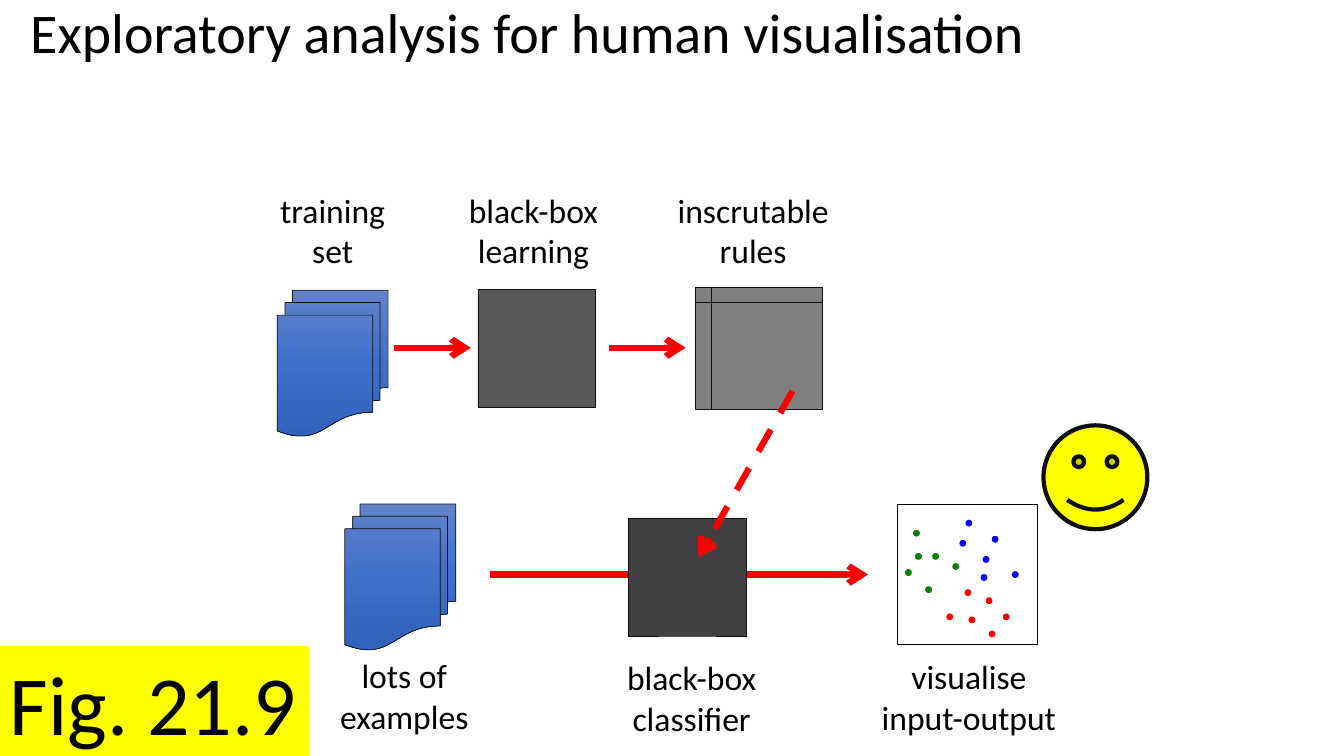
from copy import deepcopy

from lxml.etree import SubElement
from pptx import Presentation
from pptx.dml.color import RGBColor
from pptx.enum.dml import MSO_LINE
from pptx.enum.shapes import MSO_CONNECTOR, MSO_SHAPE
from pptx.enum.text import MSO_ANCHOR, PP_ALIGN
from pptx.oxml.ns import qn
from pptx.util import Inches, Pt

HUES = {
    "ink": "000000", "edge": "0D0D0D", "paper": "FFFFFF",
    "learn": "595959", "rules": "808080", "class": "404040",
    "red": "FF0000", "green": "008000", "blue": "0000FF", "yellow": "FFFF00",
    "light": "6183CB", "middle": "3E70CA", "deep": "3062BB",
}
DOTS = {
    "green": [(0.16, 0.26), (0.35, 0.49), (0.55, 0.59), (0.18, 0.49),
              (0.08, 0.65), (0.28, 0.82)],
    "red": [(0.67, 0.85), (0.88, 0.93), (1.05, 1.09), (0.49, 1.09),
            (0.71, 1.12), (0.91, 1.26)],
    "blue": [(0.68, 0.16), (0.94, 0.32), (0.83, 0.7), (0.62, 0.36),
             (0.85, 0.52), (1.14, 0.67)],
}


def hue(name):
    return RGBColor.from_string(HUES[name])


def write(frame, text, size=24, align=PP_ALIGN.CENTER, wrap=False):
    frame.word_wrap = wrap
    frame.vertical_anchor = MSO_ANCHOR.TOP
    line = frame.paragraphs[0]
    line.text = text
    line.alignment = align
    for run in line.runs:
        run.font.size = Pt(size)
        run.font.name = "Calibri"
        run.font.color.rgb = hue("ink")
    return line


def label(slide, text, left, top, width):
    box = slide.shapes.add_textbox(
        Inches(left), Inches(top), Inches(width), Inches(0.91))
    write(box.text_frame, text)


def draw(slide, kind, box, fill, edge="edge", weight=0.5):
    shape = slide.shapes.add_shape(kind, *map(Inches, box))
    shape.shadow.inherit = False
    if fill:
        shape.fill.solid()
        shape.fill.fore_color.rgb = hue(fill)
    if edge:
        shape.line.color.rgb = hue(edge)
        shape.line.width = Pt(weight)
    else:
        shape.line.fill.background()
    return shape


def arrow(slide, start, end, dash=False):
    line = slide.shapes.add_connector(
        MSO_CONNECTOR.STRAIGHT, *map(Inches, start + end))
    line.line.color.rgb = hue("red")
    line.line.width = Pt(4.5)
    if dash:
        line.line.dash_style = MSO_LINE.DASH
    props = line._element.spPr
    SubElement(props.find(qn("a:ln")), qn("a:tailEnd"), type="arrow")
    SubElement(props, qn("a:effectLst"))


def stack(slide, left, top):
    box = (left, top, 1.1, 1.45)
    shape = draw(slide, MSO_SHAPE.FLOWCHART_MULTIDOCUMENT, box, None)
    shape.fill.gradient()
    shape.fill.gradient_angle = 270
    first = shape._element.spPr.find(qn("a:gradFill")).find(qn("a:gsLst"))[0]
    first.addnext(deepcopy(first))
    names = ("light", "middle", "deep")
    for index, stop in enumerate(shape.fill.gradient_stops):
        stop.color.rgb = hue(names[index])
        stop.position = index / 2


def head(slide, left, top, width, height):
    title = slide.shapes.title
    title.left, title.top = Inches(left), Inches(top)
    title.width, title.height = Inches(width), Inches(height)
    line = write(title.text_frame,
                 "Exploratory analysis for human visualisation",
                 size=40, align=PP_ALIGN.LEFT, wrap=True)
    line.line_spacing = 0.9


def train(slide, left, top):
    label(slide, "training\nset", left, top, 1.26)
    label(slide, "black-box\nlearning", left + 1.86, top, 1.52)
    label(slide, "inscrutable\nrules", left + 3.94, top, 1.72)
    stack(slide, left + 0.08, top + 1.05)
    draw(slide, MSO_SHAPE.RECTANGLE,
         (left + 2.07, top + 1.04, 1.17, 1.17), "learn")
    draw(slide, MSO_SHAPE.FLOWCHART_INTERNAL_STORAGE,
         (left + 4.23, top + 1.02, 1.26, 1.21), "rules")
    for start in (left + 1.24, left + 3.37):
        arrow(slide, (start, top + 1.62), (start + 0.76, top + 1.62))


def apply(slide, left, top):
    arrow(slide, (left + 1.6, top + 0.7), (left + 5.35, top + 0.7))
    stack(slide, left + 0.16, top)
    draw(slide, MSO_SHAPE.RECTANGLE,
         (left + 2.97, top + 0.14, 1.17, 1.17), "class")
    label(slide, "lots of\nexamples", left, top + 1.45, 1.5)
    label(slide, "black-box\nclassifier", left + 2.84, top + 1.47, 1.52)
    label(slide, "visualise\ninput-output", left + 5.37, top + 1.46, 1.96)


def plot(slide, left, top, side):
    draw(slide, MSO_SHAPE.RECTANGLE, (left, top, side, side), "paper", "ink")
    for shade, spots in DOTS.items():
        for across, down in spots:
            draw(slide, MSO_SHAPE.OVAL,
                 (left + across, top + down, 0.06, 0.06), shade, shade)


def tag(slide, left, top, width, height):
    box = (left, top, width, height)
    shape = draw(slide, MSO_SHAPE.RECTANGLE, box, "yellow", None)
    write(shape.text_frame, "Fig. 21.9", size=60, align=PP_ALIGN.LEFT)


def main():
    deck = Presentation()
    deck.slide_width, deck.slide_height = Inches(13.33), Inches(7.5)
    slide = deck.slides.add_slide(deck.slide_layouts[5])
    head(slide, 0.2, 0, 12.93, 1.78)
    train(slide, 2.67, 1.83)
    apply(slide, 3.26, 5)
    arrow(slide, (7.86, 3.88), (6.93, 5.53), dash=True)
    plot(slide, 8.9, 5, 1.39)
    draw(slide, MSO_SHAPE.SMILEY_FACE, (10.35, 4.22, 1.03, 1.03),
         "yellow", weight=3)
    tag(slide, 0, 6.41, 3.07, 1.11)
    deck.save("out.pptx")


if __name__ == "__main__":
    main()
